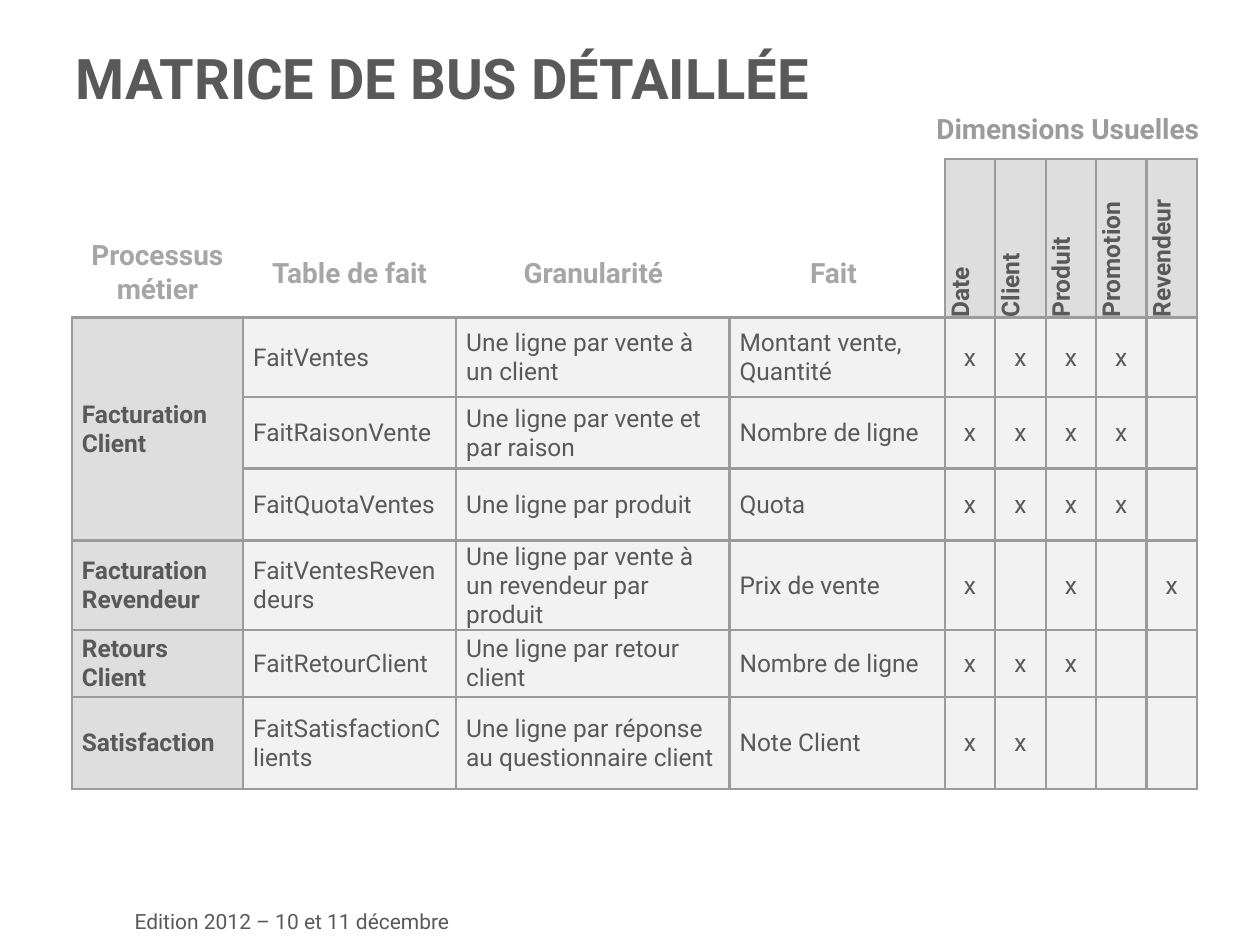
from dataclasses import dataclass

from lxml.etree import SubElement
from pptx import Presentation
from pptx.dml.color import RGBColor
from pptx.enum.text import MSO_ANCHOR, MSO_AUTO_SIZE, PP_ALIGN
from pptx.oxml.ns import qn
from pptx.util import Inches, Pt


@dataclass(frozen=True)
class Theme:
    font: str = "Roboto"
    text: str = "595959"
    rule: str = "9B9B9B"
    caption: str = "A6A6A6"
    header_fill: str = "DEDEDE"
    body_fill: str = "F2F2F2"
    title_size: int = 32
    caption_size: int = 16
    cell_size: int = 14
    footer_size: int = 12
    rule_width: float = 1.5


THEME = Theme()
TABLE_LEFT, TABLE_TOP = 0.57, 1.26
COLUMNS = [1.36, 1.69, 2.17, 1.71] + [0.4] * 5
ROWS = [1.26, 0.63, 0.57, 0.57, 0.63, 0.53, 0.73]
TEXT_COLUMNS = 4
CAPTION_MIDDLE = 2.16
DIMENSIONS = ["Date", "Client", "Produit", "Promotion", "Revendeur"]
# Heading, width, height
CAPTIONS = [
    ("Processus métier", 1.34, 0.64),
    ("Table de fait", 1.67, 0.37),
    ("Granularité", 2.16, 0.37),
    ("Fait", 1.63, 0.37),
]
# Process, fact table, granularity, fact, dimensions used
FACTS = [
    ("Facturation Client", "FaitVentes", "Une ligne par vente à un client",
     "Montant vente, Quantité", "Date Client Produit Promotion"),
    ("", "FaitRaisonVente", "Une ligne par vente et par raison",
     "Nombre de ligne", "Date Client Produit Promotion"),
    ("", "FaitQuotaVentes", "Une ligne par produit",
     "Quota", "Date Client Produit Promotion"),
    ("Facturation Revendeur", "FaitVentesRevendeurs",
     "Une ligne par vente à un revendeur par produit",
     "Prix de vente", "Date Produit Revendeur"),
    ("Retours Client", "FaitRetourClient", "Une ligne par retour client",
     "Nombre de ligne", "Date Client Produit"),
    ("Satisfaction", "FaitSatisfactionClients",
     "Une ligne par réponse au questionnaire client",
     "Note Client", "Date Client"),
]


def style_paragraph(para, size, color=THEME.text, bold=False, align=PP_ALIGN.LEFT):
    para.alignment = align
    font = para.font
    font.name, font.size, font.bold = THEME.font, Pt(size), bold
    font.color.rgb = RGBColor.from_string(color)


def add_title(page, text):
    title = page.shapes.title
    title.left, title.top = Inches(0.5), Inches(0.3)
    title.width, title.height = Inches(9), Inches(0.62)
    frame = title.text_frame
    frame.text = text
    frame.auto_size = MSO_AUTO_SIZE.NONE
    frame.vertical_anchor = MSO_ANCHOR.MIDDLE
    style_paragraph(frame.paragraphs[0], THEME.title_size, bold=True)


def add_label(page, text, left, top, width, height, wrap=True, **style):
    box = page.shapes.add_textbox(*map(Inches, (left, top, width, height)))
    frame = box.text_frame
    frame.text = text
    frame.word_wrap = wrap
    frame.auto_size = MSO_AUTO_SIZE.SHAPE_TO_FIT_TEXT
    style_paragraph(frame.paragraphs[0], **style)


def set_borders(cell, visible="LRTB"):
    """Draw the visible sides; this must come before the cell's fill."""
    properties = cell._tc.get_or_add_tcPr()
    for side in "LRTB":
        line = SubElement(properties, qn(f"a:ln{side}"), w=str(Pt(THEME.rule_width)))
        if side in visible:
            paint = SubElement(line, qn("a:solidFill"))
            SubElement(paint, qn("a:srgbClr"), val=THEME.rule)
        else:
            SubElement(line, qn("a:noFill"))


def fill_cell(cell, text, color, margins, **style):
    set_borders(cell)
    cell.fill.solid()
    cell.fill.fore_color.rgb = RGBColor.from_string(color)
    cell.text = text
    cell.vertical_anchor = MSO_ANCHOR.MIDDLE
    (cell.margin_left, cell.margin_top,
     cell.margin_right, cell.margin_bottom) = map(Inches, margins)
    style_paragraph(cell.text_frame.paragraphs[0], THEME.cell_size, **style)


def add_header_row(table):
    for column in range(TEXT_COLUMNS):
        blank = table.cell(0, column)
        set_borders(blank, "RB" if column in (0, TEXT_COLUMNS - 1) else "B")
        blank.fill.background()
    table.cell(0, 0).merge(table.cell(0, TEXT_COLUMNS - 1))
    for column, name in enumerate(DIMENSIONS, TEXT_COLUMNS):
        cell = table.cell(0, column)
        fill_cell(cell, name, THEME.header_fill, (0, 0.01, 0.01, 0.08), bold=True)
        cell._tc.tcPr.set("vert", "vert270")


def add_fact_row(table, row, fact):
    *texts, used = fact
    for column, text in enumerate(texts):
        is_process = column == 0
        color = THEME.header_fill if is_process else THEME.body_fill
        fill_cell(table.cell(row, column), text, color,
                  (0.08, 0.01, 0.08, 0), bold=is_process)
    for column, name in enumerate(DIMENSIONS, TEXT_COLUMNS):
        mark = "x" if name in used.split() else ""
        fill_cell(table.cell(row, column), mark, THEME.body_fill,
                  (0.01, 0.01, 0.01, 0), align=PP_ALIGN.CENTER)


def add_matrix(page):
    table = page.shapes.add_table(
        len(ROWS), len(COLUMNS), Inches(TABLE_LEFT), Inches(TABLE_TOP),
        Inches(sum(COLUMNS)), Inches(sum(ROWS))).table
    table.first_row = table.horz_banding = False
    for column, width in zip(table.columns, COLUMNS):
        column.width = Inches(width)
    for row, height in zip(table.rows, ROWS):
        row.height = Inches(height)
    add_header_row(table)
    for row, fact in enumerate(FACTS, 1):
        add_fact_row(table, row, fact)
    table.cell(1, 0).merge(table.cell(3, 0))


def add_captions(page):
    style = dict(size=THEME.caption_size, bold=True, align=PP_ALIGN.CENTER)
    add_label(page, "Dimensions Usuelles", 7.3, 0.84, 2.35, 0.37,
              wrap=False, color=THEME.rule, **style)
    for index, (text, width, height) in enumerate(CAPTIONS):
        left = TABLE_LEFT + sum(COLUMNS[:index]) + 0.01
        add_label(page, text, left, CAPTION_MIDDLE - height / 2, width, height,
                  color=THEME.caption, **style)


def main():
    deck = Presentation()
    deck.slide_width, deck.slide_height = Inches(10), Inches(7.5)
    page = deck.slides.add_slide(deck.slide_layouts.get_by_name("Title Only"))
    add_label(page, "Edition 2012 – 10 et 11 décembre", 0.97, 7.16, 2.77, 0.3,
              wrap=False, size=THEME.footer_size)
    add_title(page, "MATRICE DE BUS DÉTAILLÉE")
    add_matrix(page)
    add_captions(page)
    deck.save("out.pptx")


if __name__ == "__main__":
    main()
